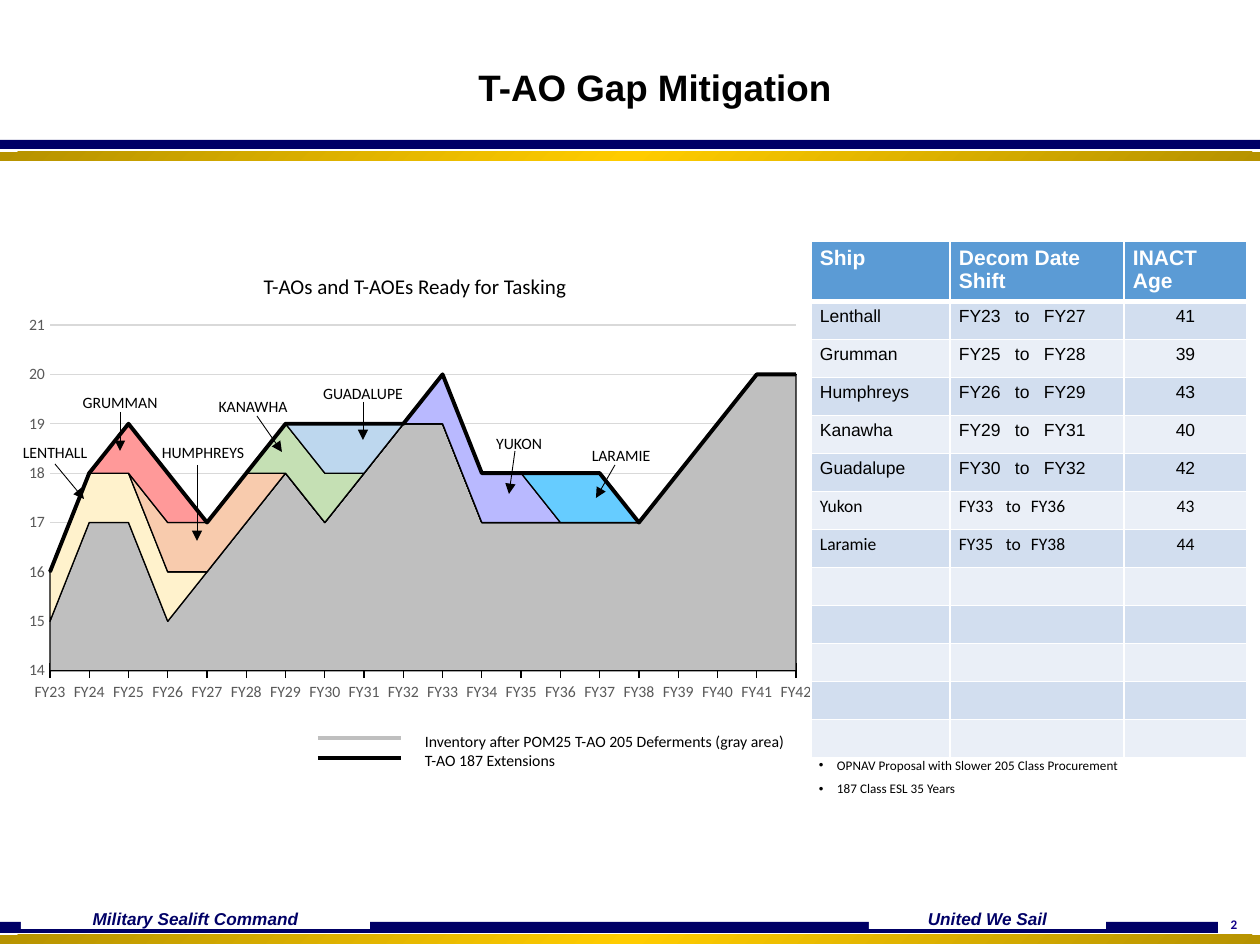
from lxml import etree
from pptx import Presentation
from pptx import util as u
from pptx.chart.data import CategoryChartData
from pptx.dml.color import RGBColor
from pptx.enum import chart as ch, shapes, text
from pptx.oxml import parse_xml
from pptx.oxml.ns import nsdecls, qn

CENTER, LEFT = text.PP_ALIGN.CENTER, text.PP_ALIGN.LEFT
NAVY, BLACK, WHITE = "000066", "000000", "FFFFFF"


def px(n):
    return u.Emu(round(n * 914400 / 126))


def color(value):
    return RGBColor.from_string(value)


def sub(parent, tag, **attrs):
    """Append a child element with a prefixed tag name."""
    return etree.SubElement(parent, qn(tag), attrs)


def pen(line, value, width):
    line.color.rgb = color(value)
    line.width = u.Pt(width)


class Deck:
    font = "Calibri"

    def __init__(self, width, height):
        self.prs = Presentation()
        self.prs.slide_width, self.prs.slide_height = px(width), px(height)
        self.s = self.prs.slides.add_slide(self.prs.slide_layouts[6])

    def style(self, p, size, value=BLACK, font=None, bold=False, italic=False, align=LEFT):
        p.alignment = align
        for r in p.runs:
            f = r.font
            f.size, f.name, f.bold, f.italic = u.Pt(size), font or self.font, bold, italic
            f.color.rgb = color(value)

    def text(self, x, y, w, h, words, size, inset=13, middle=False, bullet=False, **look):
        tf = self.s.shapes.add_textbox(px(x), px(y), px(w), px(h)).text_frame
        tf.word_wrap = True
        tf.margin_left = tf.margin_right = px(inset)
        if middle:
            tf.vertical_anchor = text.MSO_ANCHOR.MIDDLE
            tf.margin_top = tf.margin_bottom = 0
        tf.text = words
        for i, p in enumerate(tf.paragraphs):
            if bullet:
                pPr = p._p.get_or_add_pPr()
                pPr.set("marL", str(px(18)))
                pPr.set("indent", str(-px(18)))
                sub(pPr, "a:buFont", typeface="Arial")
                sub(pPr, "a:buChar", char="•")
                if i:
                    p.space_before = u.Pt(4.5)
            self.style(p, size, **look)

    def bar(self, x, y, w, h, fill):
        sp = self.s.shapes.add_shape(shapes.MSO_SHAPE.RECTANGLE, px(x), px(y), px(w), px(h))
        sp.shadow.inherit = False
        sp.line.fill.background()
        sp.fill.solid()
        sp.fill.fore_color.rgb = color(fill)
        return sp

    def gold_bar(self, x, y, w, h):
        """Bar that shades from dark gold to bright gold and back."""
        spPr = self.bar(x, y, w, h, "FFCC00")._element.spPr
        stops = "".join(f'<a:gs pos="{pos}"><a:srgbClr val="{c}"/></a:gs>' for pos, c in
                        ((0, "B69200"), (50000, "FFCC00"), (100000, "B69200")))
        spPr.replace(spPr.find(qn("a:solidFill")), parse_xml(
            f'<a:gradFill {nsdecls("a")}><a:gsLst>{stops}</a:gsLst>'
            '<a:lin ang="2700000" scaled="0"/></a:gradFill>'))

    def line(self, x1, y1, x2, y2, value=BLACK, width=0.5, arrow=False):
        c = self.s.shapes.add_connector(
            shapes.MSO_CONNECTOR.STRAIGHT, px(x1), px(y1), px(x2), px(y2))
        pen(c.line, value, width)
        if arrow:
            sub(c._element.spPr.find(qn("a:ln")), "a:tailEnd", type="triangle")
        sub(c._element.spPr, "a:effectLst")

    def area_line_chart(self, x, y, w, h, cats, areas, total):
        """Stacked areas (name, colour, values) with a total line on the same axes."""
        data = CategoryChartData()
        data.categories = cats
        for name, _, values in areas:
            data.add_series(name, values)
        data.add_series(*total)
        chart = self.s.shapes.add_chart(
            ch.XL_CHART_TYPE.AREA_STACKED, px(x), px(y), px(w), px(h), data).chart
        chart.has_legend = chart.has_title = False
        chart.font.name, chart.font.size = self.font, u.Pt(10)

        area = chart._chartSpace.find(".//" + qn("c:areaChart"))
        line = parse_xml(f'<c:lineChart {nsdecls("c")}><c:grouping val="standard"/>'
                         '<c:varyColors val="0"/></c:lineChart>')
        line.append(area.findall(qn("c:ser"))[-1])
        sub(line, "c:marker", val="1")
        for ax in area.findall(qn("c:axId")):
            sub(line, "c:axId", val=ax.get("val"))
        area.addnext(line)
        area_plot, line_plot = chart.plots
        area_plot.vary_by_categories = False
        for ser, (_, fill, _) in zip(area_plot.series, areas):
            ser.format.fill.solid()
            ser.format.fill.fore_color.rgb = color(fill)
            pen(ser.format.line, BLACK, 0.75)
        ser = line_plot.series[0]
        ser.smooth = False
        ser.marker.style = ch.XL_MARKER_STYLE.NONE
        pen(ser.format.line, BLACK, 2.25)

        cat, val = chart.category_axis, chart.value_axis
        for ax in (cat, val):
            ax.tick_labels.font.size = u.Pt(9)
            ax.tick_labels.font.name = self.font
            ax.tick_labels.font.color.rgb = color("595959")
        cat.major_tick_mark = ch.XL_TICK_MARK.CROSS
        pen(cat.format.line, BLACK, 0.75)
        val.minimum_scale, val.maximum_scale, val.major_unit = 14, 21, 1
        val.major_tick_mark = ch.XL_TICK_MARK.NONE
        val.format.line.fill.background()
        pen(val.major_gridlines.format.line, "D9D9D9", 0.75)
        for tag, mode in (("c:crossBetween", "midCat"), ("c:dispBlanksAs", "zero")):
            for el in chart._chartSpace.iter(qn(tag)):
                el.set("val", mode)
        plot = chart._chartSpace.find(".//" + qn("c:plotArea"))
        for old in plot.findall(qn("c:layout")):
            plot.remove(old)
        sizes = "".join(f'<c:{k} val="{v}"/>' for k, v in
                        (("x", 0.05), ("y", 0.04), ("w", 0.91), ("h", 0.86)))
        plot.insert(0, parse_xml(
            f'<c:layout {nsdecls("c")}><c:manualLayout><c:layoutTarget val="inner"/>'
            f'<c:xMode val="edge"/><c:yMode val="edge"/>{sizes}</c:manualLayout></c:layout>'))

    def cell(self, cell, words, fill, size, tabs=(), bottom=1, **look):
        cell.margin_left = cell.margin_right = px(9)
        cell.margin_top = cell.margin_bottom = px(5)
        tcPr = cell._tc.get_or_add_tcPr()
        for side in "LRTB":
            ln = sub(tcPr, "a:ln" + side, w=str(u.Pt(bottom if side == "B" else 1)))
            sub(sub(ln, "a:solidFill"), "a:srgbClr", val=WHITE)
        cell.fill.solid()
        cell.fill.fore_color.rgb = color(fill)
        p = cell.text_frame.paragraphs[0]
        if not words:
            sub(p._p, "a:endParaRPr", sz=str(size * 100))
            return
        p.text = words
        if tabs:
            tab_list = sub(p._p.get_or_add_pPr(), "a:tabLst")
            for tab in tabs:
                sub(tab_list, "a:tab", pos=str(px(tab)), algn="l")
        self.style(p, size, **look)

    def table(self, x, y, widths, head_height, row_height, head, rows):
        height = head_height + row_height * len(rows)
        t = self.s.shapes.add_table(len(rows) + 1, len(widths), px(x), px(y),
                                    px(sum(widths)), px(height)).table
        for col, w in zip(t.columns, widths):
            col.width = px(w)
        for i, row in enumerate(t.rows):
            row.height = px(row_height if i else head_height)
        for j, words in enumerate(head):
            self.cell(t.cell(0, j), words, "5B9BD5", 12, bottom=3,
                      value=WHITE, font="Arial", bold=True)
        for i, row in enumerate(rows, 1):
            font, tabs = ("Arial", (56, 85)) if i < 6 else ("Calibri", (47, 72))
            for j, words in enumerate(row):
                self.cell(t.cell(i, j), words, "D2DEEF" if i % 2 else "EAEFF7", 10,
                          tabs=tabs if j == 1 else (), font=font,
                          align=CENTER if j == 2 else LEFT)


# name, area colour, first year index, years in the gap, last year of the shift, age
SHIPS = [
    ("Lenthall", "FFF2CC", 0, 4, 27, 41), ("Humphreys", "F8CBAD", 3, 3, 29, 43),
    ("Grumman", "FF9999", 2, 2, 28, 39), ("Kanawha", "C5E0B4", 6, 2, 31, 40),
    ("Guadalupe", "BDD7EE", 7, 2, 32, 42), ("Yukon", "B9B9FF", 10, 3, 36, 43),
    ("Laramie", "66CCFF", 13, 2, 38, 44),
]
FIRST_YEARS = {"Laramie": 35}  # shift begins before the gap
INVENTORY = [15, 17, 17, 15, 16, 17, 18, 17, 18, 19, 19, 17, 17, 17, 17, 17, 18, 19, 20, 20]
EXTENDED = [16, 18, 19, 18, 17, 18, 19, 19, 19, 19, 20, 18, 18, 18, 18, 17, 18, 19, 20, 20]
# label, centre and top of the label, then the arrow's ends
LABELS = [
    ("KANAWHA", 253, 391, (257, 416, 282, 452)), ("YUKON", 519, 428, (515, 451, 509, 494)),
    ("GUADALUPE", 363, 378, (363, 402, 363, 440)), ("LARAMIE", 621, 440, (615, 465, 596, 498)),
    ("GRUMMAN", 120, 387, (120, 412, 120, 451)), ("LENTHALL", 55, 437, (55, 464, 84, 499)),
    ("HUMPHREYS", 203, 437, (197, 465, 197, 541)),
]


def main():
    d = Deck(1260, 945)
    d.bar(0, 140, 1260, 9, NAVY)
    d.gold_bar(0, 152, 1260, 9)
    d.text(1213, 912, 42, 25, "2", 7.5, inset=0, middle=True,
           value="110189", bold=True, align=CENTER)
    d.bar(0, 922, 1218, 11, NAVY)
    d.gold_bar(0, 935, 1260, 9)
    for x, w, words in ((21, 349, "Military Sealift Command"), (869, 237, "United We Sail")):
        d.bar(x, 909, w, 20, WHITE)
        d.text(x, 909, w, 20, words, 9.8, middle=True, value=NAVY, font="Arial",
               bold=True, italic=True, align=CENTER)
    d.text(103, 42, 1104, 89, "T-AO Gap Mitigation", 21, middle=True,
           font="Arial", bold=True, align=CENTER)

    d.text(412, 726, 417, 50,
           "Inventory after POM25 T-AO 205 Deferments (gray area)\nT-AO 187 Extensions", 9)
    d.line(318, 738, 401, 738, "BFBFBF", 2)
    d.line(318, 758, 401, 758, BLACK, 2)

    areas = [("Inventory", "BFBFBF", INVENTORY)]
    for name, fill, start, span, *_ in SHIPS:
        values = [1 if start <= i < start + span else None for i in range(len(INVENTORY))]
        areas.append((name, fill, values))
    d.area_line_chart(9, 309, 820, 402, [f"FY{year}" for year in range(23, 43)],
                      areas, ("T-AO 187 Extensions", EXTENDED))
    for words, mid, top, ends in LABELS:
        d.text(mid - 55, top, 110, 32, words, 9, inset=0, align=CENTER)
        d.line(*ends, arrow=True)
    d.text(175, 267, 480, 38, "T-AOs and T-AOEs Ready for Tasking", 12, align=CENTER)

    rows = [(name, f"FY{FIRST_YEARS.get(name, 23 + start)}\tto\tFY{end}", str(age))
            for name, _, start, _, end, age in sorted(SHIPS, key=lambda ship: ship[2])]
    d.table(811, 241, (139, 174, 123), 60, 38, ("Ship", "Decom Date Shift", "INACT Age"),
            rows + [("", "", "")] * 5)
    d.text(806, 751, 440, 53,
           "OPNAV Proposal with Slower 205 Class Procurement\n187 Class ESL 35 Years",
           7.5, bullet=True)
    d.prs.save("out.pptx")


if __name__ == "__main__":
    main()
